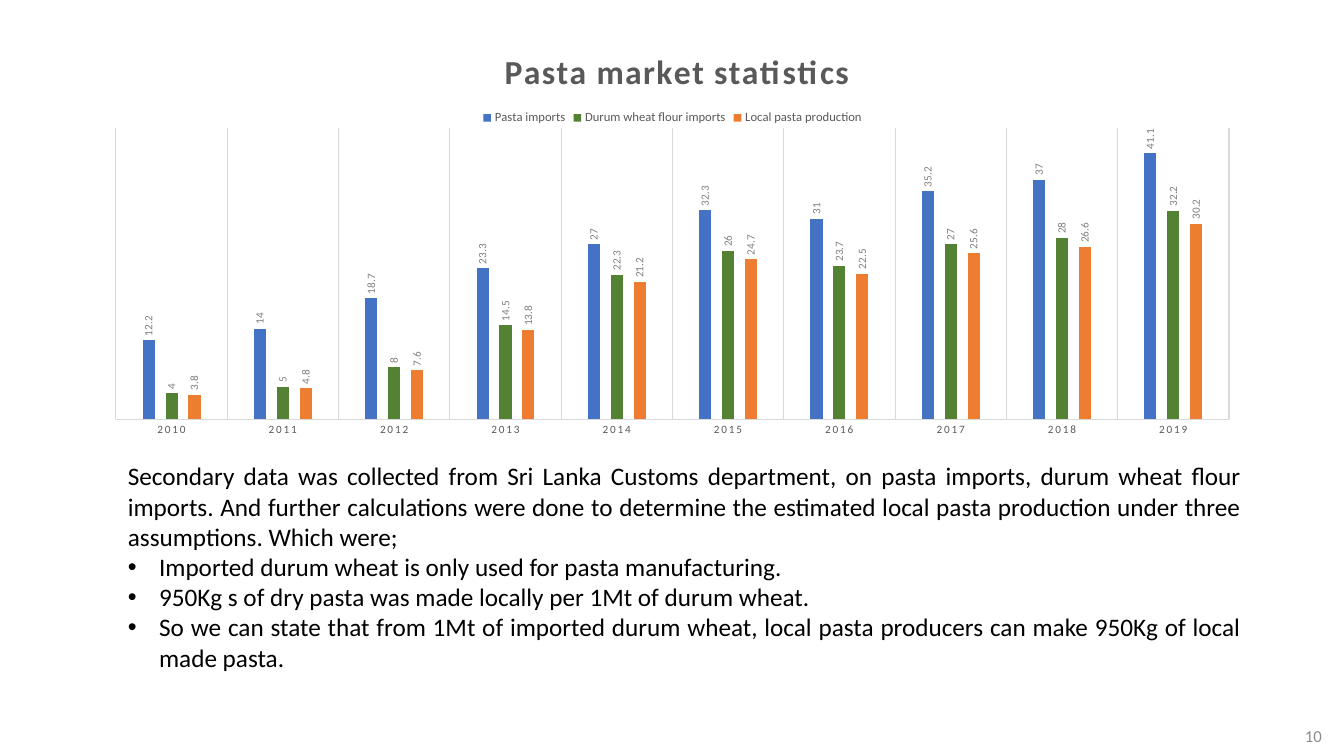
from dataclasses import dataclass

from lxml import etree
from pptx import Presentation
from pptx.chart.data import CategoryChartData
from pptx.dml.color import RGBColor
from pptx.enum.chart import (XL_CHART_TYPE, XL_LABEL_POSITION,
                             XL_LEGEND_POSITION, XL_TICK_MARK)
from pptx.enum.text import MSO_ANCHOR, PP_ALIGN
from pptx.oxml.ns import qn
from pptx.util import Inches, Pt

COLUMNS = XL_CHART_TYPE.COLUMN_CLUSTERED
OUTSIDE_END = XL_LABEL_POSITION.OUTSIDE_END
LEGEND_TOP = XL_LEGEND_POSITION.TOP
NO_TICKS = XL_TICK_MARK.NONE
JUSTIFY, RIGHT = PP_ALIGN.JUSTIFY, PP_ALIGN.RIGHT
TOP, MIDDLE = MSO_ANCHOR.TOP, MSO_ANCHOR.MIDDLE


@dataclass(frozen=True)
class Theme:
    font: str = "Calibri"
    body: str = "000000"
    heading: str = "595959"
    label: str = "808080"
    page: str = "8C8C8C"
    grid: str = "D9D9D9"
    title_size: int = 24
    body_size: int = 18
    page_size: int = 12
    legend_size: int = 9
    label_size: int = 8


THEME = Theme()

YEARS = [str(year) for year in range(2010, 2020)]
MARKET = [
    ("Pasta imports", "4472C4",
     [12.2, 14, 18.7, 23.3, 27, 32.3, 31, 35.2, 37, 41.1]),
    ("Durum wheat flour imports", "548235",
     [4, 5, 8, 14.5, 22.3, 26, 23.7, 27, 28, 32.2]),
    ("Local pasta production", "ED7D31",
     [3.8, 4.8, 7.6, 13.8, 21.2, 24.7, 22.5, 25.6, 26.6, 30.2]),
]
INTRO = ("Secondary data was collected from Sri Lanka Customs department, on pasta "
         "imports, durum wheat flour imports. And further calculations were done to "
         "determine the estimated local pasta production under three assumptions. "
         "Which were;")
ASSUMPTIONS = [
    "Imported durum wheat is only used for pasta manufacturing.",
    "950Kg s of dry pasta was made locally per 1Mt of durum wheat.",
    "So we can state that from 1Mt of imported durum wheat, local pasta producers "
    "can make 950Kg of local made pasta. ",
]


def style_font(font, size, color, bold=False):
    font.name = THEME.font
    font.size = Pt(size)
    font.bold = bold
    font.color.rgb = RGBColor.from_string(color)


def add_bullet(paragraph):
    properties = paragraph._p.get_or_add_pPr()
    properties.set("marL", str(Inches(0.31)))
    properties.set("indent", str(-Inches(0.31)))
    etree.SubElement(properties, qn("a:buFont")).set("typeface", "Arial")
    etree.SubElement(properties, qn("a:buChar")).set("char", "•")


def add_text(slide, box, text, bullets=(), size=THEME.body_size,
             color=THEME.body, align=JUSTIFY, anchor=TOP):
    frame = slide.shapes.add_textbox(*map(Inches, box)).text_frame
    frame.word_wrap = True
    frame.vertical_anchor = anchor
    for index, line in enumerate([text, *bullets]):
        paragraph = frame.add_paragraph() if index else frame.paragraphs[0]
        if index:
            add_bullet(paragraph)
        paragraph.alignment = align
        run = paragraph.add_run()
        run.text = line
        style_font(run.font, size, color)


def place(element, **fractions):
    """Fix the place of a chart part, in fractions of the chart's size."""
    layout = element.find(qn("c:layout"))
    if layout is None:
        layout = etree.Element(qn("c:layout"))
        overlay = element.find(qn("c:overlay"))
        if overlay is None:
            element.insert(0, layout)
        else:
            overlay.addprevious(layout)
    manual = etree.SubElement(layout, qn("c:manualLayout"))
    if element.tag == qn("c:plotArea"):
        etree.SubElement(manual, qn("c:layoutTarget")).set("val", "inner")
    for side in ("x", "y"):
        etree.SubElement(manual, qn(f"c:{side}Mode")).set("val", "edge")
    for side, fraction in fractions.items():
        etree.SubElement(manual, qn(f"c:{side}")).set("val", str(fraction))


def style_title(chart, text):
    chart.has_title = True
    paragraph = chart.chart_title.text_frame.paragraphs[0]
    run = paragraph.add_run()
    run.text = text
    style_font(run.font, THEME.title_size, THEME.heading, bold=True)
    run._r.get_or_add_rPr().set("spc", "100")
    place(chart.chart_title._element, x=0.35, y=0.045)


def style_legend(chart):
    chart.has_legend = True
    chart.legend.position = LEGEND_TOP
    chart.legend.include_in_layout = False
    style_font(chart.legend.font, THEME.legend_size, THEME.heading)


def style_axes(chart):
    years = chart.category_axis
    years.major_tick_mark = years.minor_tick_mark = NO_TICKS
    years.has_major_gridlines = True
    for line in (years.format.line, years.major_gridlines.format.line):
        line.color.rgb = RGBColor.from_string(THEME.grid)
        line.width = Pt(0.75)
    style_font(years.tick_labels.font, THEME.label_size, THEME.heading)
    for properties in years._element.iter(qn("a:defRPr")):
        properties.set("spc", "120")

    volume = chart.value_axis
    volume.minimum_scale, volume.maximum_scale = 0, 45
    volume.has_major_gridlines = False
    volume.visible = False


def style_series(series, color):
    series.format.fill.solid()
    series.format.fill.fore_color.rgb = RGBColor.from_string(color)
    series.invert_if_negative = False
    labels = series.data_labels
    labels.show_value = True
    labels.position = OUTSIDE_END
    style_font(labels.font, THEME.label_size, THEME.label)
    for body in labels._element.iter(qn("a:bodyPr")):
        body.set("rot", "-5400000")
        body.set("vert", "horz")


def add_market_chart(slide, box):
    data = CategoryChartData()
    data.categories = YEARS
    for name, _, values in MARKET:
        data.add_series(name, values)
    chart = slide.shapes.add_chart(COLUMNS, *map(Inches, box), data).chart
    style_font(chart.font, 10, THEME.body)
    style_title(chart, "Pasta market statistics")
    style_legend(chart)
    style_axes(chart)

    plot = chart.plots[0]
    plot.gap_width, plot.overlap = 444, -90
    plot.vary_by_categories = False
    for series, (_, color, _) in zip(plot.series, MARKET):
        style_series(series, color)
    plot_area = chart._chartSpace.find(".//" + qn("c:plotArea"))
    place(plot_area, x=0.02, y=0.246, w=0.96, h=0.692)


def main():
    deck = Presentation()
    deck.slide_width, deck.slide_height = Inches(13.33), Inches(7.5)
    slide = deck.slides.add_slide(deck.slide_layouts[6])

    # Market figures by year
    add_market_chart(slide, (0.92, 0.24, 11.5, 4.18))

    # Source of the data and assumptions
    add_text(slide, (1.17, 4.52, 11.24, 2.52), INTRO, bullets=ASSUMPTIONS)

    # Page number
    add_text(slide, (10.21, 7.1, 3, 0.4), "10", size=THEME.page_size,
             color=THEME.page, align=RIGHT, anchor=MIDDLE)

    deck.save("out.pptx")


if __name__ == "__main__":
    main()
